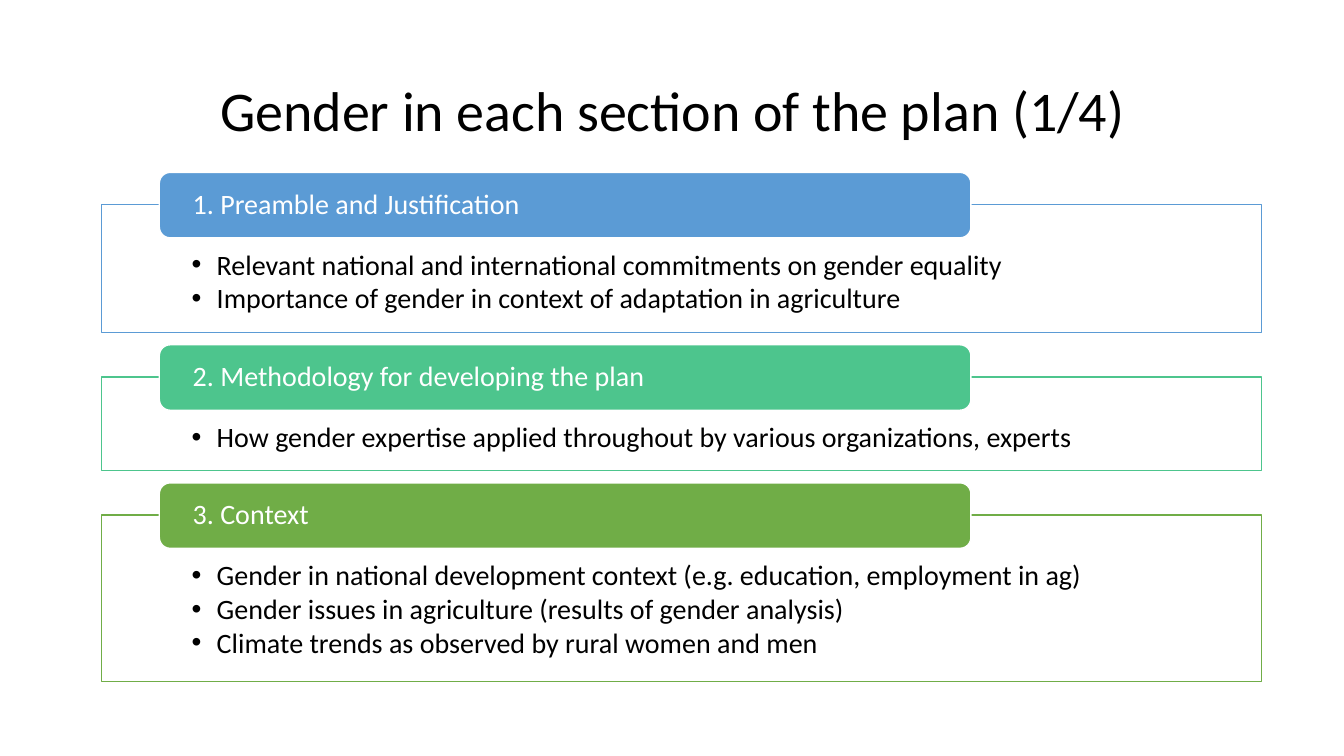
from dataclasses import dataclass

from lxml.etree import SubElement
from pptx import Presentation
from pptx.dml.color import RGBColor
from pptx.enum.shapes import MSO_SHAPE
from pptx.enum.text import MSO_ANCHOR, MSO_AUTO_SIZE, PP_ALIGN
from pptx.oxml.ns import qn
from pptx.util import Inches, Pt


@dataclass(frozen=True)
class Theme:
    font: str = "Calibri"
    title_size: int = 40
    body_size: int = 20
    ink: str = "000000"
    paper: str = "FFFFFF"
    blue: str = "5B9BD5"
    teal: str = "4DC58D"
    green: str = "70AD47"


THEME = Theme()

SECTIONS = [
    ("1. Preamble and Justification", THEME.blue, 1.27, [
        "Relevant national and international commitments on gender equality",
        "Importance of gender in context of adaptation in agriculture",
    ]),
    ("2. Methodology for developing the plan", THEME.teal, 0.93, [
        "How gender expertise applied throughout by various organizations, experts",
    ]),
    ("3. Context", THEME.green, 1.65, [
        "Gender in national development context (e.g. education, employment in ag)",
        "Gender issues in agriculture (results of gender analysis)",
        "Climate trends as observed by rural women and men",
    ]),
]
FIRST_PANEL_TOP = 2.03
PANEL_GAP = 0.44
HEADING_RISE = 0.32


class SlideBuilder:
    def __init__(self, slide, theme):
        self.slide = slide
        self.theme = theme

    def title(self, text):
        title = self.slide.shapes.title
        title.left, title.top = Inches(0.92), Inches(0.4)
        title.width, title.height = Inches(11.5), Inches(1.45)
        frame = title.text_frame
        frame.auto_size = MSO_AUTO_SIZE.NONE
        frame.vertical_anchor = MSO_ANCHOR.MIDDLE
        self.add_text(frame.paragraphs[0], text, self.theme.title_size,
                      self.theme.ink, PP_ALIGN.CENTER)

    def panel(self, top, height, colour, points):
        """Draw the outlined box that holds a section's bullet points."""
        panel = self.box(MSO_SHAPE.RECTANGLE, (1.01, top, 11.5, height),
                         self.theme.paper, colour, (0.89, 0.46, 0.89, 0.16))
        fill_colour = panel.element.spPr.find(qn("a:solidFill"))[0]
        SubElement(fill_colour, qn("a:alpha"), val="90000")
        frame = panel.text_frame
        frame.vertical_anchor = MSO_ANCHOR.TOP
        for number, point in enumerate(points):
            paragraph = frame.add_paragraph() if number else frame.paragraphs[0]
            self.add_text(paragraph, point, self.theme.body_size, self.theme.ink)
            paragraph.space_after = Pt(2.5)
            self.bullet(paragraph)

    def heading(self, top, colour, text):
        heading = self.box(MSO_SHAPE.ROUNDED_RECTANGLE, (1.58, top, 8.05, 0.65),
                           colour, self.theme.paper, (0.3, 0, 0.3, 0))
        heading.text_frame.vertical_anchor = MSO_ANCHOR.MIDDLE
        self.add_text(heading.text_frame.paragraphs[0], text,
                      self.theme.body_size, self.theme.paper)

    def box(self, preset, place, fill, line, insets):
        box = self.slide.shapes.add_shape(preset, *map(Inches, place))
        box.shadow.inherit = False
        box.fill.solid()
        box.fill.fore_color.rgb = RGBColor.from_string(fill)
        box.line.color.rgb = RGBColor.from_string(line)
        box.line.width = Pt(1)
        frame = box.text_frame
        frame.word_wrap = True
        (frame.margin_left, frame.margin_top,
         frame.margin_right, frame.margin_bottom) = map(Inches, insets)
        return box

    def add_text(self, paragraph, text, size, colour, alignment=PP_ALIGN.LEFT):
        paragraph.alignment = alignment
        paragraph.line_spacing = 0.9
        run = paragraph.add_run()
        run.text = text
        run.font.name = self.theme.font
        run.font.size = Pt(size)
        run.font.color.rgb = RGBColor.from_string(colour)

    def bullet(self, paragraph):
        properties = paragraph._p.get_or_add_pPr()
        indent = Inches(0.25)
        properties.set("marL", str(indent))
        properties.set("indent", str(-indent))
        SubElement(properties, qn("a:buFont"), typeface="Arial")
        SubElement(properties, qn("a:buChar"), char="•")


def main():
    deck = Presentation()
    deck.slide_width, deck.slide_height = Inches(13.33), Inches(7.5)
    title_only = deck.slide_layouts[5]
    builder = SlideBuilder(deck.slides.add_slide(title_only), THEME)
    builder.title("Gender in each section of the plan (1/4)")
    top = FIRST_PANEL_TOP
    for heading, colour, height, points in SECTIONS:
        builder.panel(top, height, colour, points)
        builder.heading(top - HEADING_RISE, colour, heading)
        top += height + PANEL_GAP
    deck.save("out.pptx")


if __name__ == "__main__":
    main()
